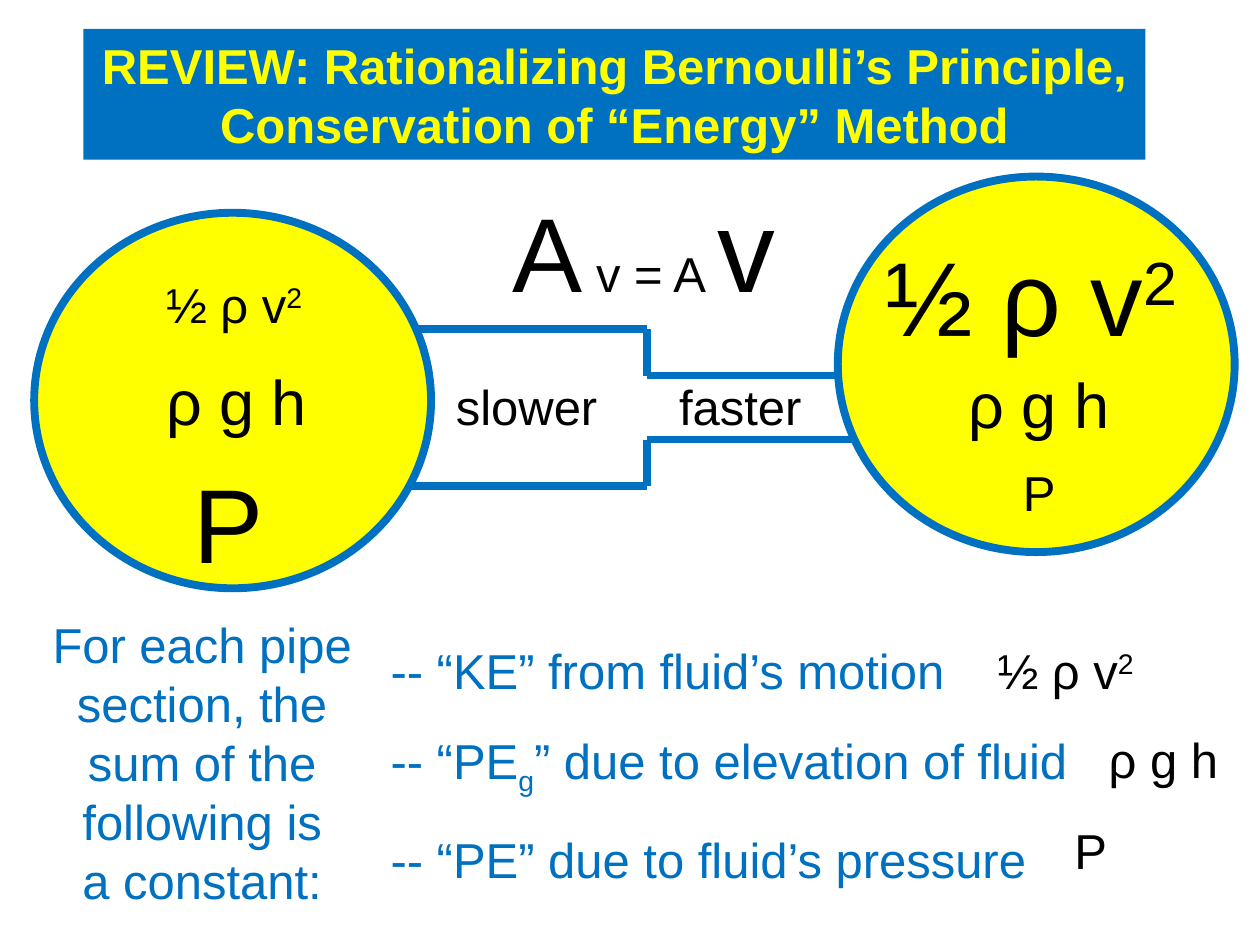
from dataclasses import dataclass

from lxml.etree import SubElement
from pptx import Presentation
from pptx.dml.color import RGBColor as RGB
from pptx.enum.shapes import MSO_CONNECTOR as Link, MSO_SHAPE as Shape
from pptx.enum.text import MSO_ANCHOR as Anchor, MSO_AUTO_SIZE as Fit, PP_ALIGN as Align
from pptx.oxml.ns import qn
from pptx.util import Cm, Pt


@dataclass(frozen=True)
class Theme:
    font: str = "Arial"
    blue: RGB = RGB(0x00, 0x70, 0xC0)
    gold: RGB = RGB(0xFF, 0xFF, 0x00)
    ink: RGB = RGB(0x00, 0x00, 0x00)
    base: int = 28
    mid: int = 36
    big: int = 60
    huge: int = 66
    line: float = 4.5


T = Theme()
SUP, SUB = 30000, -25000

# Energy terms: each run is text, then a baseline shift if it has one
KINETIC = [("½ ρ v",), ("2", SUP)]
HEIGHT = [("ρ g h",)]
PRESS = [("P",)]


def add_run(para, text, shift=0, size=T.base, color=T.ink, bold=False):
    run = para.add_run()
    run.text = text
    font = run.font
    font.name, font.size, font.bold = T.font, Pt(size), bold
    font.color.rgb = color
    if shift:
        run._r.get_or_add_rPr().set("baseline", str(shift))


def fill_text(frame, paras, align=Align.LEFT, gap=0, **style):
    """Write paragraphs, each a list of runs, with a gap in points between."""
    frame.auto_size = Fit.NONE
    for i, runs in enumerate(paras):
        para = frame.add_paragraph() if i else frame.paragraphs[0]
        para.alignment = align
        para.space_before = Pt(gap if i else 0)
        for run in runs:
            add_run(para, *run, **style)


def place(shape, left, top, width, height):
    shape.left, shape.top = Cm(left), Cm(top)
    shape.width, shape.height = Cm(width), Cm(height)


def add_title(slide, lines):
    title = slide.shapes.title
    place(title, 1.68, 0.58, 21.41, 2.64)
    title.fill.solid()
    title.fill.fore_color.rgb = T.blue
    frame = title.text_frame
    frame.word_wrap = False
    frame.vertical_anchor = Anchor.MIDDLE
    fill_text(frame, [[(line,)] for line in lines], Align.CENTER,
              color=T.gold, bold=True)


def add_list(slide, items):
    body = slide.placeholders[1]
    place(body, 7.62, 12.78, 14.4, 5)
    fill_text(body.text_frame, items, gap=18, color=T.blue)
    for para in body.text_frame.paragraphs:
        props = para._p.get_or_add_pPr()
        props.set("marL", "0")
        props.set("indent", "0")
        SubElement(props, qn("a:buNone"))


def add_text(slide, box, paras, **style):
    frame = slide.shapes.add_textbox(*map(Cm, box)).text_frame
    frame.word_wrap = False
    fill_text(frame, paras, **style)


def add_oval(slide, left, top):
    oval = slide.shapes.add_shape(Shape.OVAL, Cm(left), Cm(top), Cm(8), Cm(7.57))
    oval.shadow.inherit = False
    oval.fill.solid()
    oval.fill.fore_color.rgb = T.gold
    oval.line.color.rgb = T.blue
    oval.line.width = Pt(T.line)


def add_line(group, *ends):
    line = group.shapes.add_connector(Link.STRAIGHT, *map(Cm, ends))
    line.line.color.rgb = T.blue
    line.line.width = Pt(T.line)
    SubElement(line._element.spPr, qn("a:effectLst"))


def add_pipe(slide):
    """Draw the upper and lower walls, each stepping from wide to narrow."""
    start, step, end = 6.45, 13.05, 18.21
    pipe = slide.shapes.add_group_shape()
    for wide, thin in ((6.63, 7.57), (9.8, 8.86)):
        add_line(pipe, start, wide, step, wide)
        add_line(pipe, step, thin, end, thin)
        add_line(pipe, step, thin, step, wide)


def main():
    deck = Presentation()
    deck.slide_width, deck.slide_height = Cm(25.4), Cm(19.05)
    slide = deck.slides.add_slide(deck.slide_layouts[1])

    # Heading
    add_title(slide, ["REVIEW: Rationalizing Bernoulli’s Principle,",
                      "Conservation of “Energy” Method"])

    # Pipe with an energy circle at each end
    add_pipe(slide)
    add_oval(slide, 16.89, 3.56)
    add_oval(slide, 0.69, 4.29)
    add_text(slide, (8.94, 7.47, 3.35, 1.45), [[("slower",)]])
    add_text(slide, (13.44, 7.47, 3.1, 1.45), [[("faster",)]])

    # Continuity equation
    add_text(slide, (10.08, 3.45, 5.84, 3.07),
             [[("A", 0, T.big), (" v = A ",), ("v", 0, T.huge)]])

    # Energy terms: in the slow circle, the fast circle and beside the list
    terms = [
        ((3.1, 5.41, 3.3, 1.45), KINETIC, T.base),
        ((3.1, 7.19, 3.35, 1.8), HEIGHT, T.mid),
        ((3.66, 9.12, 1.93, 2.82), PRESS, T.big),
        ((17.6, 4.55, 6.5, 2.82), KINETIC, T.big),
        ((19.28, 7.24, 3.35, 1.8), HEIGHT, T.mid),
        ((20.37, 9.19, 1.17, 1.45), PRESS, T.base),
        ((19.86, 12.78, 3.3, 1.45), KINETIC, T.base),
        ((22.1, 14.58, 2.72, 1.45), HEIGHT, T.base),
        ((21.41, 16.41, 1.17, 1.45), PRESS, T.base),
    ]
    for box, runs, size in terms:
        add_text(slide, box, [runs], size=size)

    # Statement and list of energies
    lines = ["For each pipe", "section, the", "sum of the",
             "following is", "a constant:"]
    add_text(slide, (0.76, 12.27, 6.63, 6.25), [[(line,)] for line in lines],
             align=Align.CENTER, color=T.blue)
    add_list(slide, [
        [("-- “KE” from fluid’s motion",)],
        [("-- “PE",), ("g", SUB), ("” due to elevation of fluid",)],
        [("-- “PE” due to fluid’s pressure",)],
    ])

    deck.save("out.pptx")


if __name__ == "__main__":
    main()
